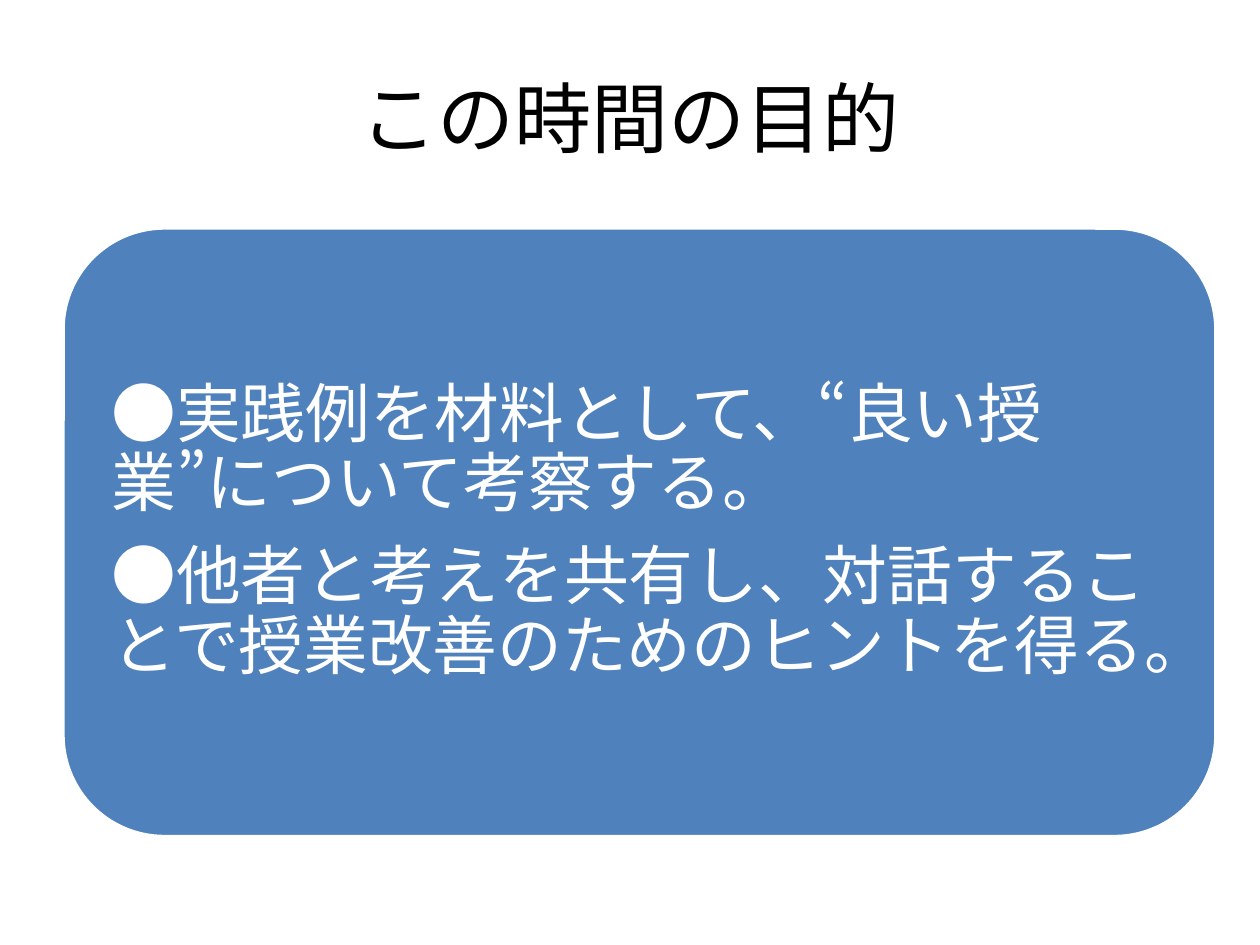
from dataclasses import dataclass

from pptx import Presentation
from pptx import util as u
from pptx.dml.color import RGBColor
from pptx.enum import lang, shapes, text


@dataclass(frozen=True)
class Theme:
    """Colours, font and type sizes of the deck."""
    font: str = "Roboto"
    ink: str = "000000"
    paper: str = "FFFFFF"
    panel: str = "4F81BD"
    title_size: int = 44
    goal_size: int = 37


class PageBuilder:
    """Adds styled elements to one page."""

    def __init__(self, page, theme):
        self.page = page
        self.theme = theme

    def place(self, box, left, top, width, height):
        box.left, box.top = u.Inches(left), u.Inches(top)
        box.width, box.height = u.Inches(width), u.Inches(height)

    def add_span(self, para, words, size, colour):
        span = para.add_run()
        span.text = words
        span.font.name = self.theme.font
        span.font.size = u.Pt(size)
        span.font.color.rgb = RGBColor.from_string(colour)
        span.font.language_id = lang.MSO_LANGUAGE_ID.JAPANESE

    def title(self, words, *area):
        box = self.page.shapes.title
        self.place(box, *area)
        box.text_frame.vertical_anchor = text.MSO_ANCHOR.MIDDLE
        para = box.text_frame.paragraphs[0]
        para.alignment = text.PP_ALIGN.CENTER
        self.add_span(para, words, self.theme.title_size, self.theme.ink)

    def goal_panel(self, goals, *area):
        box = self.page.shapes.add_shape(
            shapes.MSO_SHAPE.ROUNDED_RECTANGLE, *map(u.Inches, area))
        box.shadow.inherit = False
        box.fill.solid()
        box.fill.fore_color.rgb = RGBColor.from_string(self.theme.panel)
        box.line.color.rgb = RGBColor.from_string(self.theme.paper)
        box.line.width = u.Pt(2)
        frame = box.text_frame
        frame.word_wrap = True
        frame.vertical_anchor = text.MSO_ANCHOR.MIDDLE
        frame.margin_left = frame.margin_right = u.Inches(0.15)
        frame.margin_top = frame.margin_bottom = u.Inches(0.15)
        for index, goal in enumerate(goals):
            para = frame.add_paragraph() if index else frame.paragraphs[0]
            para.alignment = text.PP_ALIGN.LEFT
            para.line_spacing = 0.9
            para.space_after = u.Pt(13)
            self.add_span(para, goal, self.theme.goal_size, self.theme.paper)


def main():
    deck = Presentation()
    deck.slide_width, deck.slide_height = u.Inches(10), u.Inches(7.5)
    title_only = deck.slide_layouts.get_by_name("Title Only")
    builder = PageBuilder(deck.slides.add_slide(title_only), Theme())
    builder.title("この時間の目的", 0.5, 0.3, 9, 1.25)
    goals = [
        "●実践例を材料として、“良い授業”について考察する。",
        "●他者と考えを共有し、対話することで授業改善のためのヒントを得る。",
    ]
    builder.goal_panel(goals, 0.5, 1.81, 9.15, 4.83)
    deck.save("out.pptx")


if __name__ == "__main__":
    main()
